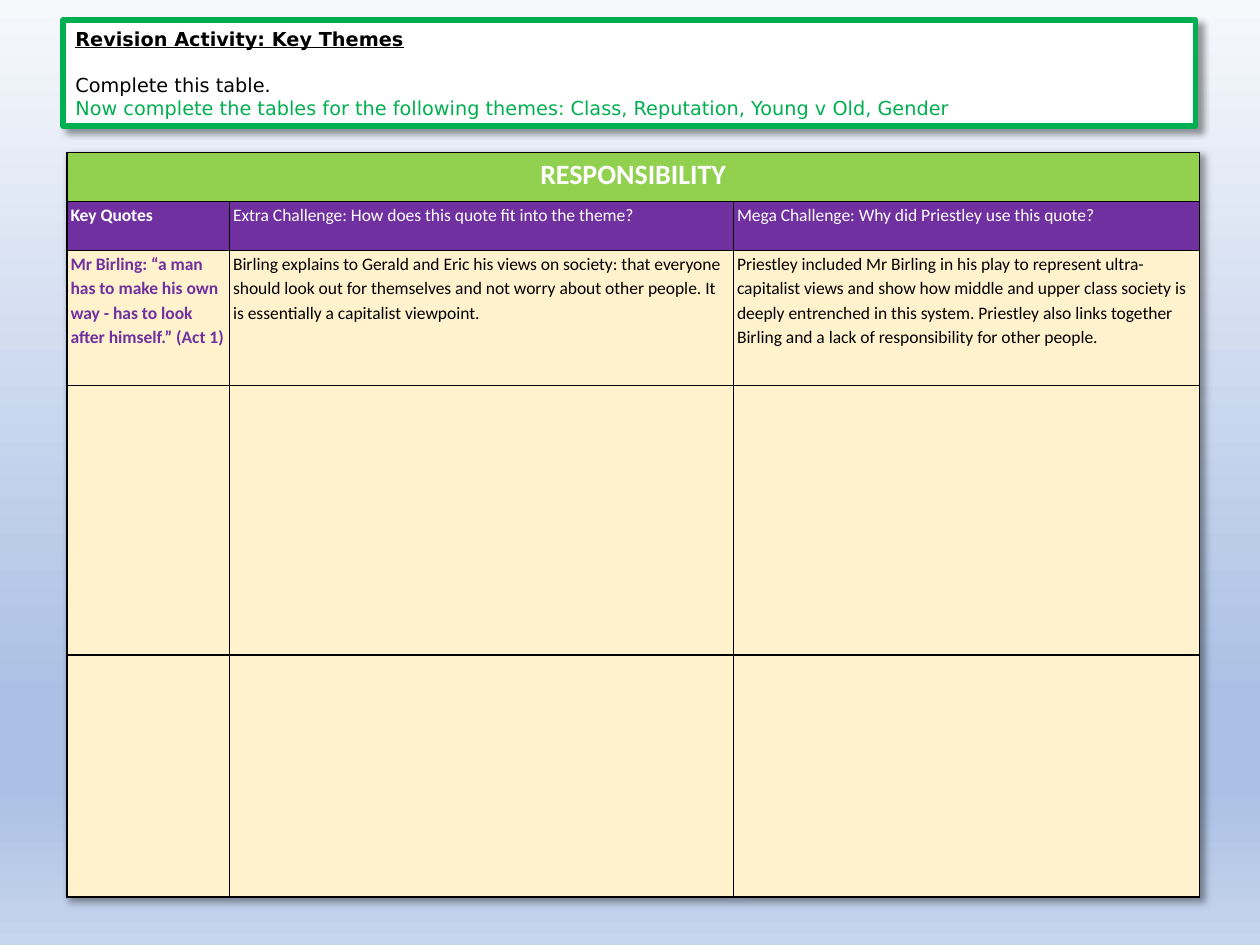
import pptx
import pptx.dml.color
import pptx.enum.shapes
import pptx.enum.text
import pptx.oxml.ns
import pptx.oxml.xmlchemy
import pptx.util
import lxml.etree

WIDTH, HEIGHT = pptx.util.Inches(10), pptx.util.Inches(7.5)
GRID_COLUMNS, GRID_ROWS = 1000, 750
COLORS = {
    "black": "000000", "white": "FFFFFF", "green": "00B050",
    "lime": "92D050", "purple": "7030A0", "cream": "FFF2CC",
    "sky top": "F6F8FC", "sky": "ABC0E4", "sky bottom": "C7D5ED",
}
SKY_STOPS = [(0, "sky top"), (74, "sky"), (83, "sky"), (100, "sky bottom")]
COLUMN_SPANS = [129, 400, 370]
ROW_SPANS = [39, 39, 107, 214, 192]
ROW_FILLS = ["lime", "purple", "cream", "cream", "cream"]
HEADINGS = [
    "Key Quotes",
    "Extra Challenge: How does this quote fit into the theme?",
    "Mega Challenge: Why did Priestley use this quote?",
]
ANSWERS = [
    "Mr Birling: “a man has to make his own way - has to look after himself.” (Act 1)",
    "Birling explains to Gerald and Eric his views on society: that everyone should look out "
    "for themselves and not worry about other people. It is essentially a capitalist viewpoint.",
    "Priestley included Mr Birling in his play to represent ultra-capitalist views and show how "
    "middle and upper class society is deeply entrenched in this system. Priestley also links "
    "together Birling and a lack of responsibility for other people.",
]


def across(columns):
    """Return the length of a number of grid columns."""
    return round(WIDTH * columns / GRID_COLUMNS)


def down(rows):
    """Return the length of a number of grid rows."""
    return round(HEIGHT * rows / GRID_ROWS)


def color(name):
    """Return a named colour."""
    return pptx.dml.color.RGBColor.from_string(COLORS[name])


def add_node(parent, tag, **attributes):
    """Append a drawing element with its attributes."""
    values = {key: str(value) for key, value in attributes.items()}
    return lxml.etree.SubElement(parent, pptx.oxml.ns.qn("a:" + tag), values)


def add_shadow(effects):
    """Put a soft shadow at the lower right into an effect list."""
    shadow = add_node(effects, "outerShdw", blurRad=pptx.util.Pt(4), dist=pptx.util.Pt(3),
                      dir=45 * 60000, algn="tl", rotWithShape=0)
    add_node(add_node(shadow, "srgbClr", val=COLORS["black"]), "alpha", val=40000)


def paint_background(page):
    """Fill the page with a gradient from top to bottom."""
    fill = page.background.fill
    fill.gradient()
    fill.gradient_angle = 270
    stops = page.element.find(".//" + pptx.oxml.ns.qn("a:gsLst"))
    stops.clear()
    for share, name in SKY_STOPS:
        add_node(add_node(stops, "gs", pos=share * 1000), "srgbClr", val=COLORS[name])


def write(para, text, font="Calibri", size=10, ink="black", bold=False, underline=False,
          align=pptx.enum.text.PP_ALIGN.LEFT, spacing=1.0, before=0):
    """Write formatted text into a paragraph."""
    para.alignment = align
    para.line_spacing = spacing
    para.space_before = pptx.util.Pt(before)
    span = para.add_run()
    span.text = text
    span.font.name = font
    span.font.size = pptx.util.Pt(size)
    span.font.bold = bold
    span.font.underline = underline
    span.font.color.rgb = color(ink)


def add_instructions(page):
    """Add the framed box with the task."""
    box = page.shapes.add_shape(pptx.enum.shapes.MSO_SHAPE.RECTANGLE,
                                across(50), down(16), across(899), down(84))
    box.fill.solid()
    box.fill.fore_color.rgb = color("white")
    box.line.color.rgb = color("green")
    box.line.width = pptx.util.Pt(3)
    box.shadow.inherit = False
    add_shadow(box.element.spPr.find(pptx.oxml.ns.qn("a:effectLst")))
    frame = box.text_frame
    frame.word_wrap = True
    frame.vertical_anchor = pptx.enum.text.MSO_ANCHOR.MIDDLE
    style = {"font": "DejaVu Sans", "size": 11}
    write(frame.paragraphs[0], "Revision Activity: Key Themes", bold=True, underline=True, **style)
    write(frame.add_paragraph(), "Complete this table.", before=13, **style)
    write(frame.add_paragraph(), "Now complete the tables for the following themes: "
          "Class, Reputation, Young v Old, Gender", ink="green", **style)


def style_cell(cell, fill):
    """Give a cell its borders, margins and fill."""
    properties = cell._tc.get_or_add_tcPr()
    for side in ("lnL", "lnR", "lnT", "lnB"):
        line = add_node(properties, side, w=pptx.util.Pt(1))
        add_node(add_node(line, "solidFill"), "srgbClr", val=COLORS["black"])
    cell.margin_left = cell.margin_right = across(3)
    cell.margin_top = cell.margin_bottom = 0
    cell.fill.solid()
    cell.fill.fore_color.rgb = color(fill)


def add_theme_table(page):
    """Add the table for the theme of responsibility."""
    holder = page.shapes.add_table(len(ROW_SPANS), len(COLUMN_SPANS), across(53), down(121),
                                   across(sum(COLUMN_SPANS)), down(sum(ROW_SPANS)))
    table = holder.table
    effects = lxml.etree.Element(pptx.oxml.ns.qn("a:effectLst"))
    add_shadow(effects)
    holder.element.find(".//" + pptx.oxml.ns.qn("a:tblPr")).insert(0, effects)
    for column, span in zip(table.columns, COLUMN_SPANS):
        column.width = across(span)
    for row, span, fill in zip(table.rows, ROW_SPANS, ROW_FILLS):
        row.height = down(span)
        for cell in row.cells:
            style_cell(cell, fill)
    table.cell(0, 0).merge(table.cell(0, len(COLUMN_SPANS) - 1))
    write(table.cell(0, 0).text_frame.paragraphs[0], "RESPONSIBILITY", size=16, ink="white",
          bold=True, align=pptx.enum.text.PP_ALIGN.CENTER, spacing=1.15)
    for index, (heading, answer) in enumerate(zip(HEADINGS, ANSWERS)):
        first = index == 0
        write(table.cell(1, index).text_frame.paragraphs[0], heading,
              ink="white", bold=first, spacing=1.15)
        write(table.cell(2, index).text_frame.paragraphs[0], answer,
              ink="purple" if first else "black", bold=first, spacing=1.15)


def main():
    """Build and save the deck."""
    deck = pptx.Presentation()
    deck.slide_width, deck.slide_height = WIDTH, HEIGHT
    page = deck.slides.add_slide(deck.slide_layouts[6])
    paint_background(page)
    add_theme_table(page)
    add_instructions(page)
    deck.save("out.pptx")


if __name__ == "__main__":
    main()
